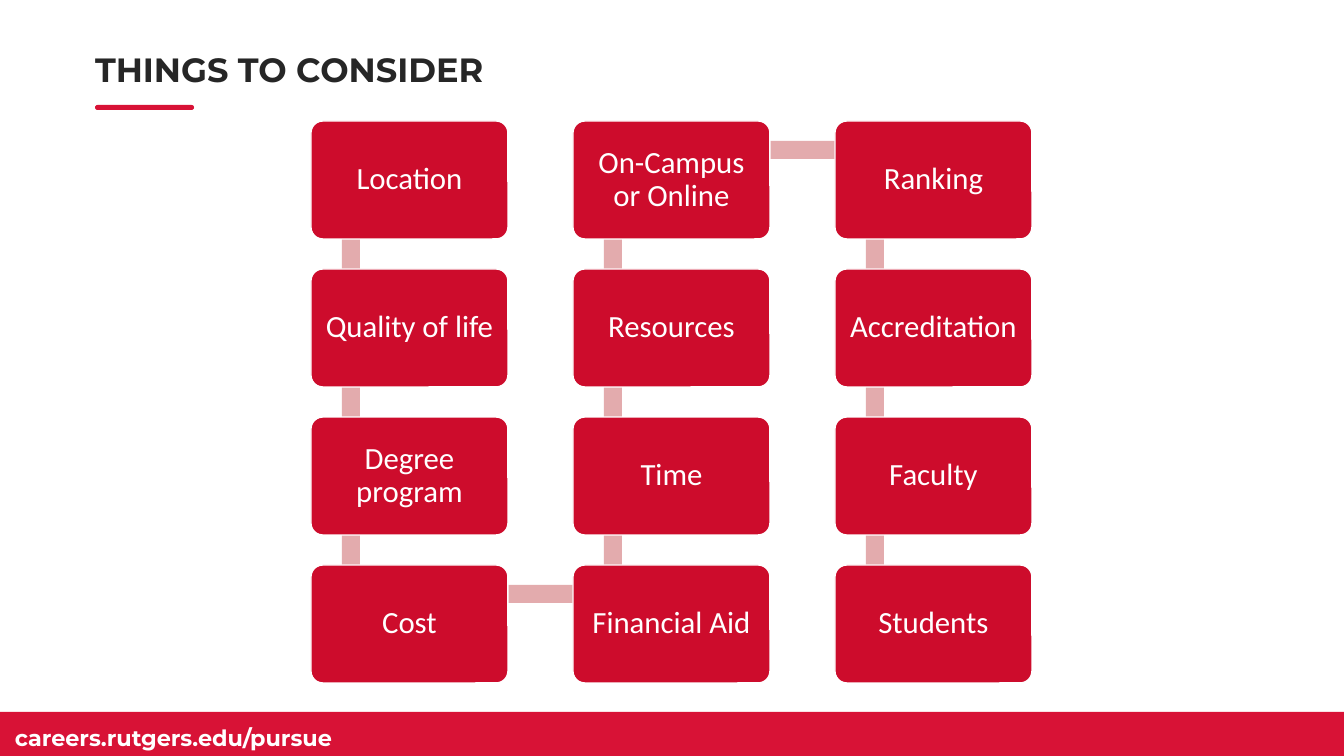
import pptx
import pptx.util
import pptx.dml.color
import pptx.enum.shapes
import pptx.enum.text

SCALE = 914400 / 100.8
COLORS = {"bar": "D81236", "card": "CD0C2C", "link": "E3ABAD",
          "white": "FFFFFF", "ink": "262626"}
KINDS = pptx.enum.shapes.MSO_SHAPE
ALIGN = pptx.enum.text.PP_ALIGN
ANCHOR = pptx.enum.text.MSO_ANCHOR
COLUMNS = [
    ["Location", "Quality of life", "Degree program", "Cost"],
    ["On-Campus or Online", "Resources", "Time", "Financial Aid"],
    ["Ranking", "Accreditation", "Faculty", "Students"],
]


def px(count):
    """Turn pixels into EMU."""
    return pptx.util.Emu(round(count * SCALE))


def color(name):
    """Look up a named colour."""
    return pptx.dml.color.RGBColor.from_string(COLORS[name])


def block(slide, kind, box, fill, round_by=None):
    """Add a plain filled shape without outline."""
    shape = slide.shapes.add_shape(kind, *map(px, box))
    shape.shadow.inherit = False
    shape.fill.solid()
    shape.fill.fore_color.rgb = color(fill)
    shape.line.fill.background()
    if round_by is not None:
        shape.adjustments[0] = round_by
    return shape


def write(shape, text, size, face, ink, bold=False, align=ALIGN.LEFT,
          anchor=ANCHOR.TOP, inset=None, space=None):
    """Fill a shape with one styled paragraph."""
    frame = shape.text_frame
    frame.text = text
    frame.word_wrap = True
    frame.auto_size = pptx.enum.text.MSO_AUTO_SIZE.NONE
    frame.vertical_anchor = anchor
    if inset is not None:
        frame.margin_left = frame.margin_right = px(inset)
        frame.margin_top = frame.margin_bottom = px(inset)
    para = frame.paragraphs[0]
    para.alignment = align
    para.line_spacing = space
    font = para.runs[0].font
    font.size = pptx.util.Pt(size)
    font.name = face
    font.bold = bold
    font.color.rgb = color(ink)


def header(slide, box):
    """Place the title and the short rule under it."""
    left, top, width, height = box
    title = slide.shapes.title
    title.left, title.top, title.width, title.height = map(px, box)
    write(title, "THINGS TO CONSIDER", 24, "Montserrat", "ink", bold=True,
          inset=0, space=0.9)
    block(slide, KINDS.ROUNDED_RECTANGLE, (left, top + 52, 99, 5), "bar", 0.5)


def footer(slide, box):
    """Place the bottom band with the web address."""
    left, top, width, height = box
    block(slide, KINDS.RECTANGLE, box, "bar")
    label = slide.shapes.add_textbox(*map(px, (left + 5, top + 7, 498, 37)))
    write(label, "careers.rutgers.edu/pursue", 16, "Montserrat", "white",
          bold=True)


def snake(slide, box):
    """Place the winding grid of cards over the links joining them."""
    left, top, width, height = box
    wide, high = 197, 118
    last_col, last_row = len(COLUMNS) - 1, len(COLUMNS[0]) - 1
    step_x = (width - wide) // last_col
    step_y = (height - high) // last_row
    for col, names in enumerate(COLUMNS):
        x = left + col * step_x
        for row in range(last_row):
            y = top + row * step_y
            block(slide, KINDS.RECTANGLE, (x + 31, y + 29, 18, step_y), "link")
        if col < last_col:
            y = top + (0 if col % 2 else last_row * step_y)
            block(slide, KINDS.RECTANGLE, (x + 40, y + 20, step_x, 18), "link")
    for col, names in enumerate(COLUMNS):
        for row, name in enumerate(names):
            spot = (left + col * step_x, top + row * step_y, wide, high)
            card = block(slide, KINDS.ROUNDED_RECTANGLE, spot, "card", 0.1)
            card.line.color.rgb = color("white")
            card.line.width = pptx.util.Pt(1)
            write(card, name, 22, "Calibri", "white", align=ALIGN.CENTER,
                  anchor=ANCHOR.MIDDLE, inset=9, space=0.9)


def main():
    """Build the slide and save it."""
    deck = pptx.Presentation()
    deck.slide_width, deck.slide_height = px(1344), px(756)
    slide = deck.slides.add_slide(deck.slide_layouts[5])
    header(slide, (95, 53, 1154, 36))
    footer(slide, (0, 712, 1344, 44))
    snake(slide, (311, 121, 721, 562))
    deck.save("out.pptx")


if __name__ == "__main__":
    main()
